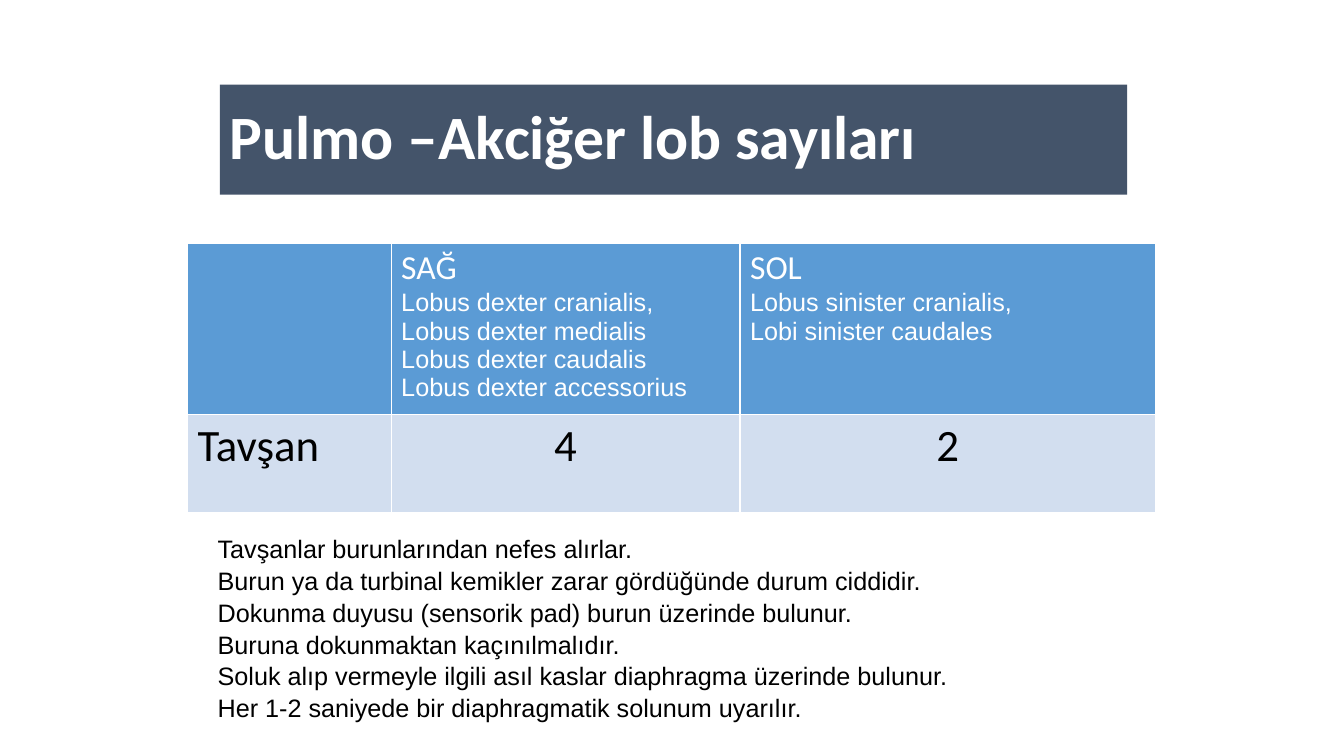
from lxml import etree
from pptx import Presentation
from pptx.dml.color import RGBColor
from pptx.enum import text
from pptx.oxml import ns
from pptx.util import Inches, Pt

WHITE, BLACK = "FFFFFF", "000000"
SLATE, HEADER_BLUE, PALE_BLUE = "44546A", "5B9BD5", "D2DEEF"

COLUMN_WIDTHS = [2.02, 3.46, 4.12]
ROW_HEIGHTS = [1.7, 0.98]
LOBES = [
    [[],
     ["SAĞ", "Lobus dexter cranialis,", "Lobus dexter medialis",
      "Lobus dexter caudalis", "Lobus dexter accessorius"],
     ["SOL", "Lobus sinister cranialis,", "Lobi sinister caudales"]],
    [["Tavşan"], ["4"], ["2"]],
]
BREATHING_NOTES = [
    "Tavşanlar burunlarından nefes alırlar.",
    "Burun ya da turbinal kemikler zarar gördüğünde durum ciddidir.",
    "Dokunma duyusu (sensorik pad) burun üzerinde bulunur.",
    "Buruna dokunmaktan kaçınılmalıdır.",
    "Soluk alıp vermeyle ilgili asıl kaslar diaphragma üzerinde bulunur.",
    "Her 1-2 saniyede bir diaphragmatik solunum uyarılır.",
]


def paint(fill, color):
    fill.solid()
    fill.fore_color.rgb = RGBColor.from_string(color)


def style(paragraph, font_name, size, color, bold=False):
    for run in paragraph.runs:
        run.font.name = font_name
        run.font.size = Pt(size)
        run.font.bold = bold
        run.font.color.rgb = RGBColor.from_string(color)


def add_borders(cell, color):
    """Give the cell a 1 pt line on every side, ahead of its fill."""
    properties = cell._tc.get_or_add_tcPr()
    for position, side in enumerate(("lnL", "lnR", "lnT", "lnB")):
        line = etree.Element(ns.qn(f"a:{side}"), w=str(Pt(1)))
        solid = etree.SubElement(line, ns.qn("a:solidFill"))
        etree.SubElement(solid, ns.qn("a:srgbClr"), val=color)
        properties.insert(position, line)


def add_title(slide, wording):
    title = slide.shapes.title
    title.left, title.top = Inches(2.18), Inches(0.84)
    title.width, title.height = Inches(9), Inches(1.09)
    paint(title.fill, SLATE)
    frame = title.text_frame
    frame.text = wording
    frame.auto_size = text.MSO_AUTO_SIZE.NONE
    frame.vertical_anchor = text.MSO_ANCHOR.MIDDLE
    heading = frame.paragraphs[0]
    heading.alignment = text.PP_ALIGN.LEFT
    heading.line_spacing = 0.9
    style(heading, "Calibri", 44, WHITE, bold=True)


def fill_cell(cell, lines, is_header, centred):
    paint(cell.fill, HEADER_BLUE if is_header else PALE_BLUE)
    add_borders(cell, WHITE)
    cell.text_frame.text = "\n".join(lines)
    for index, paragraph in enumerate(cell.text_frame.paragraphs):
        if centred:
            paragraph.alignment = text.PP_ALIGN.CENTER
        if not is_header:
            style(paragraph, "Calibri", 32, BLACK)
        elif index == 0:
            style(paragraph, "Calibri", 24, WHITE)
        else:
            style(paragraph, "Arial", 18, WHITE)


def add_lobe_table(slide):
    table = slide.shapes.add_table(
        len(ROW_HEIGHTS), len(COLUMN_WIDTHS), Inches(1.86), Inches(2.41),
        Inches(sum(COLUMN_WIDTHS)), Inches(sum(ROW_HEIGHTS))).table
    for column, width in zip(table.columns, COLUMN_WIDTHS):
        column.width = Inches(width)
    for r, (row, height) in enumerate(zip(table.rows, ROW_HEIGHTS)):
        row.height = Inches(height)
        for c, cell in enumerate(row.cells):
            fill_cell(cell, LOBES[r][c], is_header=r == 0,
                      centred=r > 0 and c > 0)


def add_notes_box(slide, lines):
    box = slide.shapes.add_textbox(
        Inches(2.06), Inches(5.23), Inches(9.45), Inches(1.9))
    frame = box.text_frame
    frame.word_wrap = True
    frame.auto_size = text.MSO_AUTO_SIZE.SHAPE_TO_FIT_TEXT
    frame.text = "\n".join(lines)
    for paragraph in frame.paragraphs:
        paragraph.line_spacing = 1.05
        style(paragraph, "Arial", 18, BLACK)


def main():
    deck = Presentation()
    deck.slide_width, deck.slide_height = Inches(13.33), Inches(7.5)
    slide = deck.slides.add_slide(deck.slide_layouts.get_by_name("Title Only"))

    # Title band
    add_title(slide, "Pulmo –Akciğer lob sayıları")
    # Lobe counts, right and left
    add_lobe_table(slide)
    # Remarks on breathing
    add_notes_box(slide, BREATHING_NOTES)

    deck.save("out.pptx")


if __name__ == "__main__":
    main()
